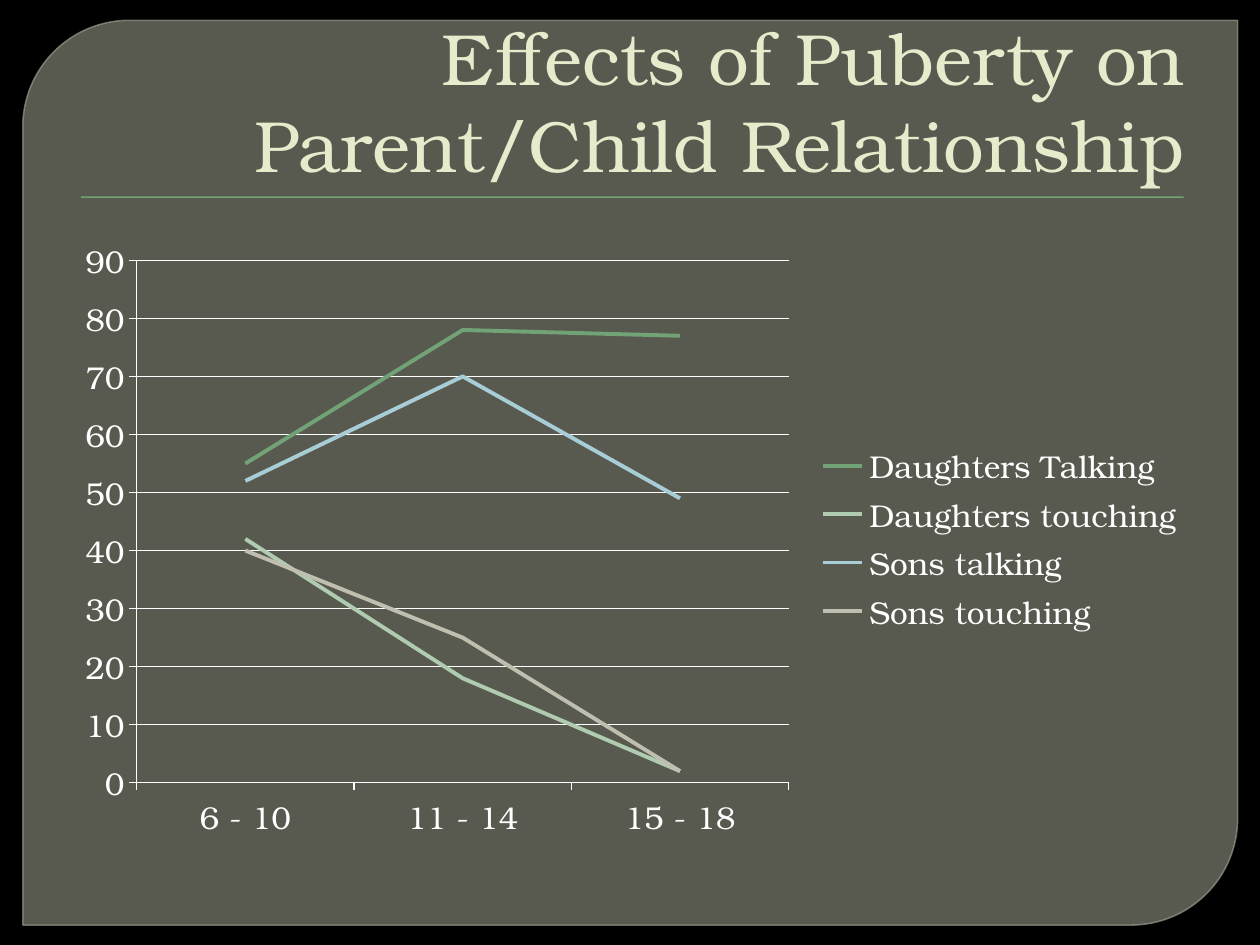
"""Build a slide with a line chart on puberty and the parent/child relationship."""
from lxml import etree
from pptx import Presentation
from pptx.chart.data import CategoryChartData
from pptx.dml.color import RGBColor
from pptx.enum.chart import XL_CHART_TYPE as ChartType, XL_LEGEND_POSITION as LegendPos
from pptx.enum.chart import XL_TICK_MARK as Tick
from pptx.enum.shapes import MSO_SHAPE as Shape
from pptx.enum.text import MSO_ANCHOR as Anchor, MSO_AUTO_SIZE as AutoSize, PP_ALIGN as Align
from pptx.oxml import parse_xml
from pptx.oxml.ns import nsdecls, qn
from pptx.util import Cm, Pt

FONT = "TeX Gyre Bonum"
BLACK = RGBColor(0x00, 0x00, 0x00)
WHITE = RGBColor(0xFF, 0xFF, 0xFF)
CREAM = RGBColor(0xE7, 0xEA, 0xCB)
OLIVE = RGBColor(0x88, 0x8B, 0x7B)
EDGE = RGBColor(0x9D, 0xA0, 0x90)
GREEN = RGBColor(0x72, 0xA3, 0x76)
MINT = RGBColor(0xB0, 0xCC, 0xB0)
SKY = RGBColor(0xA8, 0xCD, 0xD7)
SAND = RGBColor(0xC0, 0xBE, 0xAF)

AGES = ["6 - 10", "11 - 14", "15 - 18"]
SERIES = [
    ("Daughters Talking", (55, 78, 77), GREEN),
    ("Daughters touching", (42, 18, 2), MINT),
    ("Sons talking", (52, 70, 49), SKY),
    ("Sons touching", (40, 25, 2), SAND),
]
PLOT_AREA = {"x": 0.065, "y": 0.054, "w": 0.575, "h": 0.838}


class Deck:
    """Hold the style and the current slide."""

    def __init__(self):
        self.prs = Presentation()
        self.prs.slide_width, self.prs.slide_height = Cm(25.4), Cm(19.05)
        self.s = self.prs.slides.add_slide(self.prs.slide_layouts[5])
        self.s.background.fill.solid()
        self.s.background.fill.fore_color.rgb = BLACK

    def set_alpha(self, fill, color, percent):
        fill.solid()
        fill.fore_color.rgb = color
        for clr in fill._xPr.iter(qn("a:srgbClr")):
            etree.SubElement(clr, qn("a:alpha")).set("val", str(percent * 1000))

    def panel(self, x, y, w, h):
        sp = self.s.shapes.add_shape(Shape.ROUND_2_DIAG_RECTANGLE, Cm(x), Cm(y), Cm(w), Cm(h))
        sp.shadow.inherit = False
        sp.adjustments[0], sp.adjustments[1] = 0.118, 0
        sp.line.width = Pt(0.87)
        self.set_alpha(sp.line.fill, EDGE, 88)
        self.set_alpha(sp.fill, OLIVE, 65)

    def rule(self, x, y, w, h):
        sp = self.s.shapes.add_shape(Shape.RECTANGLE, Cm(x), Cm(y), Cm(w), Cm(h))
        sp.shadow.inherit = False
        sp.fill.solid()
        sp.fill.fore_color.rgb = GREEN
        sp.line.fill.background()

    def title(self, text, x, y, w, h):
        sp = self.s.shapes.title
        sp.left, sp.top, sp.width, sp.height = Cm(x), Cm(y), Cm(w), Cm(h)
        self.s.shapes._spTree.append(sp._element)
        tf = sp.text_frame
        tf.text = text
        tf.word_wrap, tf.auto_size = True, AutoSize.NONE
        tf.vertical_anchor = Anchor.BOTTOM
        p = tf.paragraphs[0]
        p.alignment = Align.RIGHT
        p.font.name, p.font.size, p.font.color.rgb = FONT, Pt(41.4), CREAM

    def line_chart(self, cats, series, x, y, w, h):
        data = CategoryChartData()
        data.categories = cats
        for name, values, _ in series:
            data.add_series(name, values)
        frame = self.s.shapes.add_chart(ChartType.LINE, Cm(x), Cm(y), Cm(w), Cm(h), data)
        chart = frame.chart
        chart.has_title = False
        chart.font.name, chart.font.size, chart.font.color.rgb = FONT, Pt(18), WHITE
        chart.has_legend = True
        chart.legend.position = LegendPos.RIGHT
        chart.legend.include_in_layout = False
        for ser, (_, _, color) in zip(chart.plots[0].series, series):
            ser.smooth = False
            ser.format.line.width = Pt(2.25)
            ser.format.line.color.rgb = color
        axis = chart.value_axis
        axis.minimum_scale, axis.maximum_scale, axis.major_unit = 0, 90, 10
        axis.has_major_gridlines = True
        for part in (axis, chart.category_axis, axis.major_gridlines):
            part.format.line.width = Pt(0.75)
            part.format.line.color.rgb = WHITE
        for part in (axis, chart.category_axis):
            part.major_tick_mark = Tick.OUTSIDE
        self.place_plot(chart)

    def place_plot(self, chart):
        area = chart._chartSpace.find(".//" + qn("c:plotArea"))
        for old in area.findall(qn("c:layout")):
            area.remove(old)
        modes = '<c:layoutTarget val="inner"/><c:xMode val="edge"/><c:yMode val="edge"/>'
        sizes = "".join(f'<c:{k} val="{v}"/>' for k, v in PLOT_AREA.items())
        area.insert(0, parse_xml(
            f'<c:layout {nsdecls("c")}><c:manualLayout>{modes}{sizes}</c:manualLayout></c:layout>'))


def main():
    deck = Deck()
    deck.panel(0.46, 0.41, 24.49, 18.24)
    deck.rule(1.63, 3.96, 22.23, 0.03)
    deck.title("Effects of Puberty on Parent/Child Relationship", 1.27, 0.71, 22.86, 3.18)
    deck.line_chart(AGES, SERIES, 1.27, 4.57, 22.86, 12.57)
    deck.prs.save("out.pptx")


if __name__ == "__main__":
    main()
